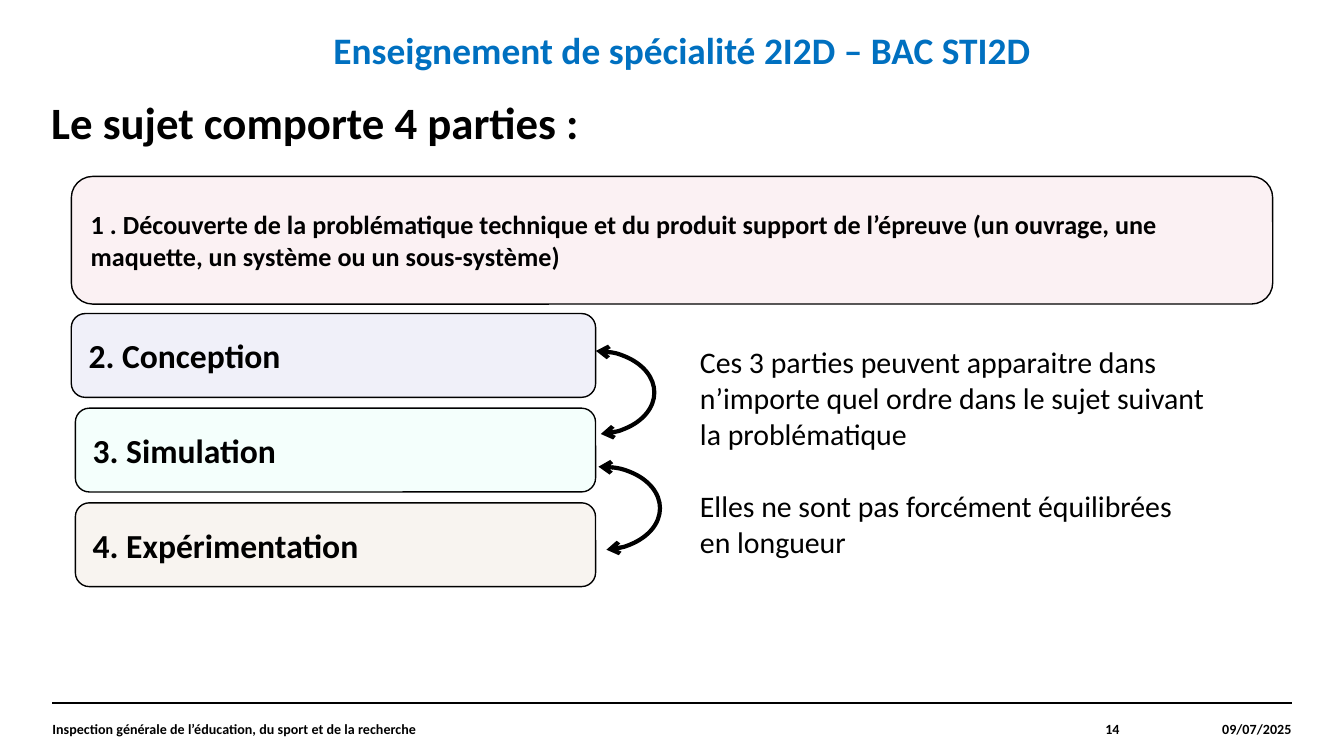
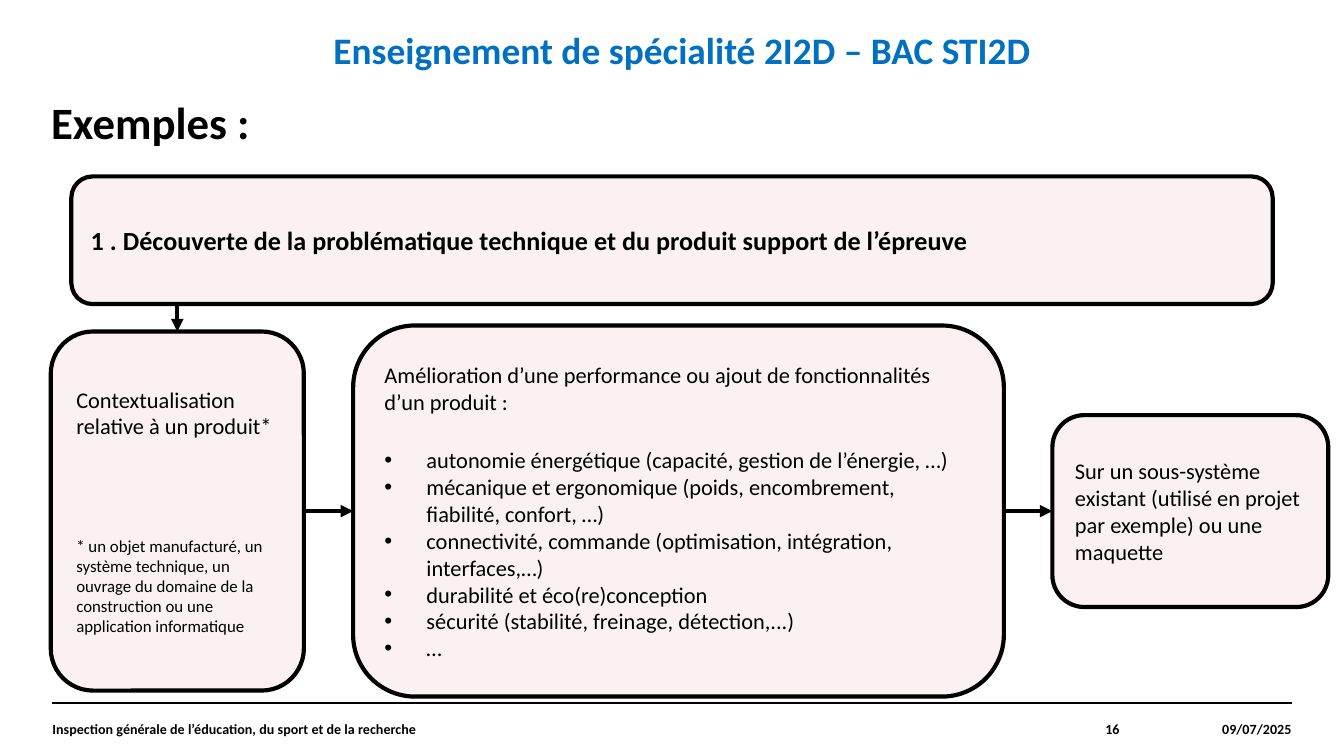
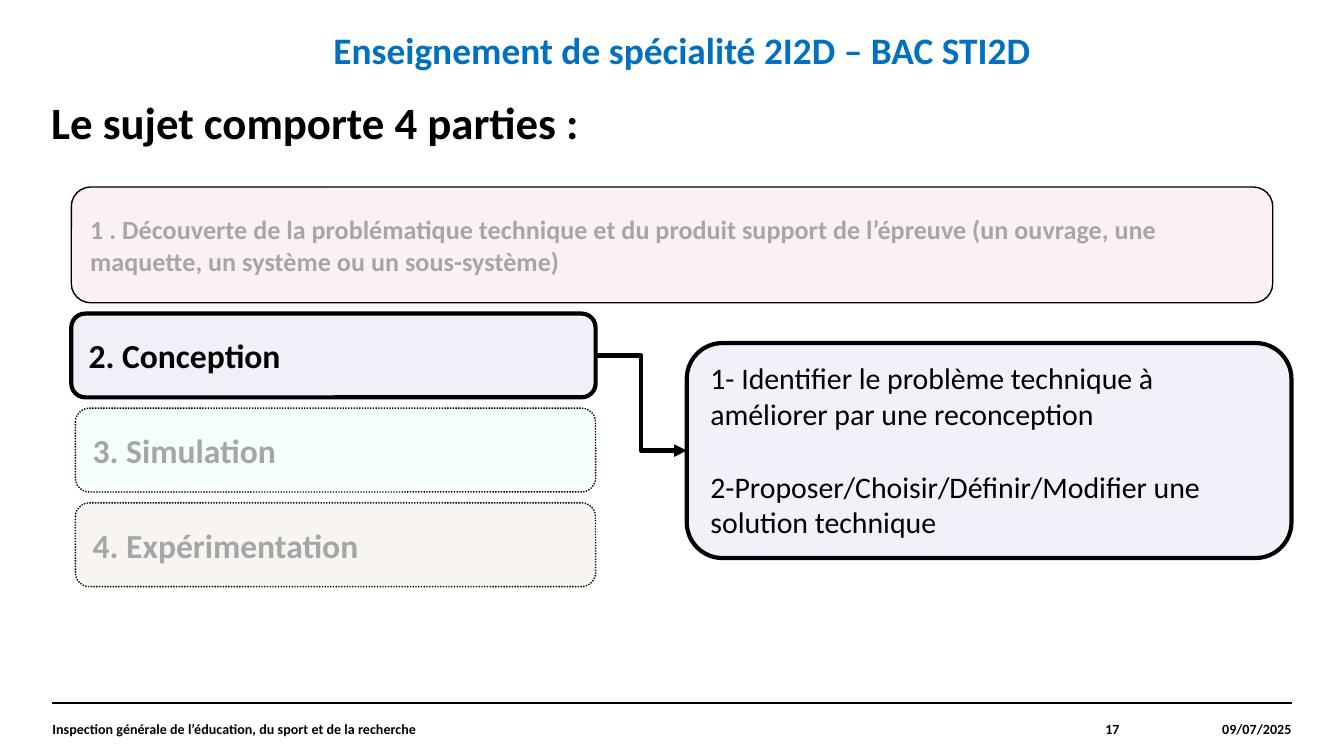
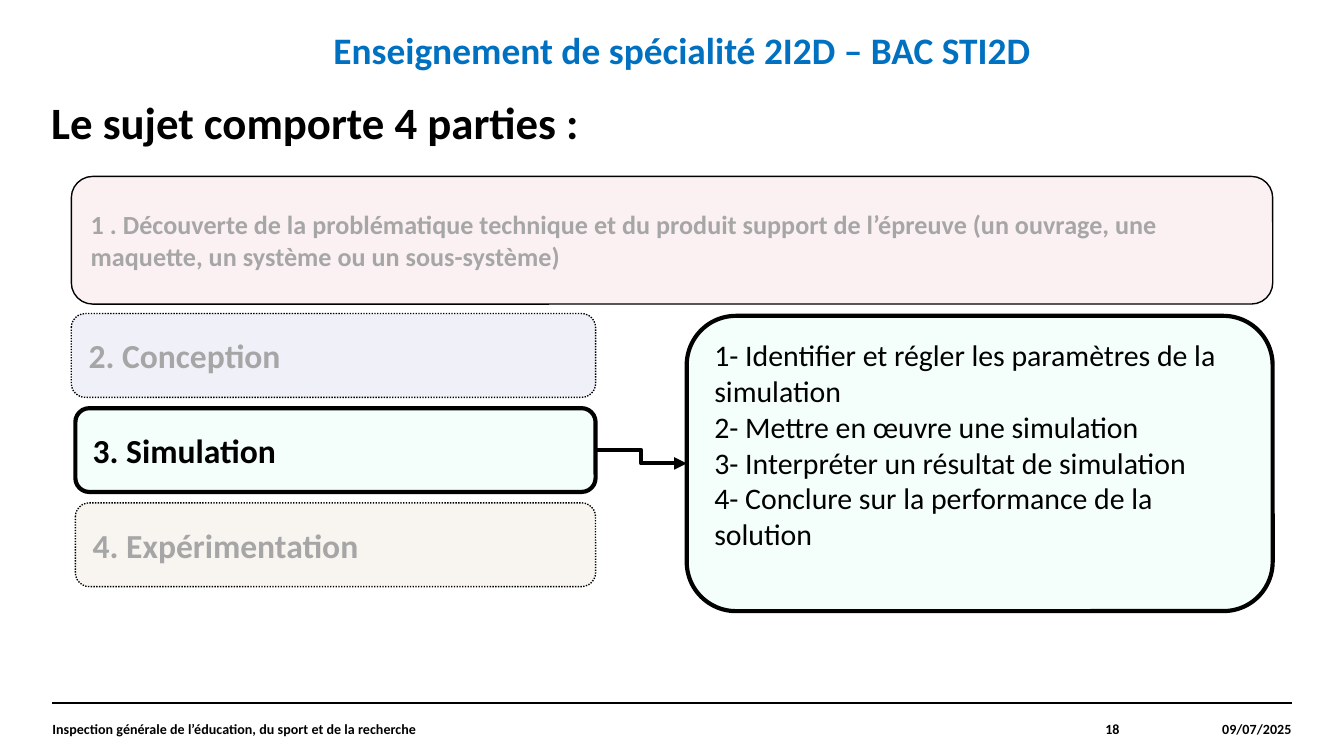
from dataclasses import dataclass

from lxml.etree import SubElement
from pptx import Presentation
from pptx.dml.color import RGBColor
from pptx.enum.dml import MSO_LINE
from pptx.enum.shapes import MSO_CONNECTOR, MSO_SHAPE
from pptx.enum.text import MSO_ANCHOR, MSO_AUTO_SIZE, PP_ALIGN
from pptx.oxml.ns import qn
from pptx.util import Pt


@dataclass(frozen=True)
class Theme:
    font: str = "Calibri"
    # Colours
    black: str = "000000"
    muted: str = "A6A6A6"
    heading: str = "0070C0"
    discovery: str = "F2C9D1"
    design: str = "C6C6EA"
    simulation: str = "D5FFF4"
    experiment: str = "E7D4C6"
    design_detail: str = "F1F1FA"
    simulation_detail: str = "F4FFFC"
    tint: int = 25  # opacity of the part colours, in percent
    # Type sizes
    title_size: float = 24
    heading_size: float = 20
    part_size: float = 18
    detail_size: float = 16
    discovery_size: float = 14
    example_size: float = 12
    note_size: float = 9
    footer_size: float = 7.5
    # Line widths
    thin: float = 0.75
    thick: float = 2.25


THEME = Theme()

HEADING = "Enseignement de spécialité 2I2D – BAC STI2D"
INSPECTORATE = "Inspection générale de l’éducation, du sport et de la recherche"
DATE = "09/07/2025"
FOUR_PARTS = "Le sujet comporte 4 parties :"
DISCOVERY = "1 . Découverte de la problématique technique et du produit support de l’épreuve"
DISCOVERY_SCOPE = " (un ouvrage, une maquette, un système ou un sous-système)"
DISCOVERY_AT = (38.2, 94.5, 643.6, 68.4)

# Label, tint and left edge of parts 2 to 4
PARTS = [
    ("2. Conception", THEME.design, 38.2),
    ("3. Simulation", THEME.simulation, 40.4),
    ("4. Expérimentation", THEME.experiment, 40.4),
]
PARTS_TOP, PARTS_PITCH, PARTS_RIGHT, PART_HEIGHT = 168, 50.7, 319.1, 44.9

# Connection sites of a rounded rectangle
TOP, LEFT, RIGHT = 0, 1, 3


@dataclass(frozen=True)
class Para:
    text: str
    size: float
    gap: float = 0
    bullet: bool = False
    bold: bool = False
    color: str = THEME.black
    align: PP_ALIGN = PP_ALIGN.LEFT


def points(*values):
    return [Pt(value) for value in values]


def add_bullet(paragraph):
    properties = paragraph._p.get_or_add_pPr()
    properties.set("marL", str(Pt(22.5)))
    properties.set("indent", str(-Pt(22.5)))
    SubElement(properties, qn("a:buFont")).set("typeface", "Arial")
    SubElement(properties, qn("a:buChar")).set("char", "•")


def write(frame, paras, anchor=MSO_ANCHOR.TOP, margins=(7.2, 3.6)):
    frame.word_wrap = True
    frame.auto_size = MSO_AUTO_SIZE.NONE
    frame.vertical_anchor = anchor
    frame.margin_left = frame.margin_right = Pt(margins[0])
    frame.margin_top = frame.margin_bottom = Pt(margins[1])
    for index, para in enumerate(paras):
        paragraph = frame.add_paragraph() if index else frame.paragraphs[0]
        paragraph.text = para.text
        paragraph.alignment = para.align
        if para.gap:
            paragraph.space_before = Pt(para.gap)
        if para.bullet:
            add_bullet(paragraph)
        font = paragraph.font
        font.name, font.size, font.bold = THEME.font, Pt(para.size), para.bold
        font.color.rgb = RGBColor.from_string(para.color)


def add_text(slide, at, paras, **layout):
    write(slide.shapes.add_textbox(*points(*at)).text_frame, paras, **layout)


def style_line(line, width):
    line.color.rgb = RGBColor.from_string(THEME.black)
    line.width = Pt(width)


def add_box(slide, at, fill, paras, width=THEME.thick, opacity=THEME.tint,
            dotted=False, anchor=MSO_ANCHOR.MIDDLE):
    box = slide.shapes.add_shape(MSO_SHAPE.ROUNDED_RECTANGLE, *points(*at))
    box.shadow.inherit = False
    box.fill.solid()
    box.fill.fore_color.rgb = RGBColor.from_string(fill)
    if opacity < 100:
        color = box._element.spPr.find(".//" + qn("a:srgbClr"))
        SubElement(color, qn("a:alpha")).set("val", str(opacity * 1000))
    style_line(box.line, width)
    if dotted:
        box.line.dash_style = MSO_LINE.ROUND_DOT
    write(box.text_frame, paras, anchor)
    return box


def add_line(slide, ends, width=THEME.thick, kind=MSO_CONNECTOR.STRAIGHT):
    line = slide.shapes.add_connector(kind, *points(*ends))
    style_line(line.line, width)
    SubElement(line._element.spPr, qn("a:effectLst"))
    return line


def add_arrowheads(shape, **heads):
    outline = shape.line._get_or_add_ln()
    for end, kind in heads.items():
        SubElement(outline, qn(f"a:{end}")).set("type", kind)


def join(slide, source, target, kind=MSO_CONNECTOR.STRAIGHT):
    arrow = add_line(slide, (0, 0, 0, 0), kind=kind)
    arrow.begin_connect(source, RIGHT)
    arrow.end_connect(target, LEFT)
    add_arrowheads(arrow, tailEnd="triangle")


def add_swap_arc(slide, left, top, start):
    arc = slide.shapes.add_shape(MSO_SHAPE.ARC, *points(left, top, 62.6, 44.6))
    arc.adjustments[0], arc.adjustments[1] = start, 49.97
    arc.shadow.inherit = False
    arc.fill.background()
    style_line(arc.line, THEME.thick)
    add_arrowheads(arc, headEnd="arrow", tailEnd="arrow")


def add_slide(deck, title, number):
    """Slide with its title, running heading and footer."""
    slide = deck.slides.add_slide(deck.slide_layouts[5])
    placeholder = slide.shapes.title
    (placeholder.left, placeholder.top,
     placeholder.width, placeholder.height) = points(27.4, 54, 663, 28)
    write(placeholder.text_frame, [Para(title, THEME.title_size, bold=True)], margins=(0, 0))
    placeholder.text_frame.paragraphs[0].line_spacing = 0.9

    add_text(slide, (178.6, 14.4, 448, 28),
             [Para(HEADING, THEME.heading_size, bold=True, color=THEME.heading)],
             margins=(0, 0))
    add_line(slide, (28.1, 376.6, 691.9, 376.6), width=0.8)
    for text, left, width, align in (
        (INSPECTORATE, 28.1, 465, PP_ALIGN.LEFT),
        (str(number), 493.2, 106.6, PP_ALIGN.RIGHT),
        (DATE, 599.8, 92.1, PP_ALIGN.RIGHT),
    ):
        add_text(slide, (left, 376.6, width, 28),
                 [Para(text, THEME.footer_size, bold=True, align=align)],
                 anchor=MSO_ANCHOR.MIDDLE, margins=(0, 0))
    return slide


def add_parts(slide, active=None, discovery_at=DISCOVERY_AT):
    """The four parts; with an active one, the others are muted."""
    focused = active is not None
    add_box(slide, discovery_at, THEME.discovery,
            [Para(DISCOVERY + DISCOVERY_SCOPE, THEME.discovery_size, bold=True,
                  color=THEME.muted if focused else THEME.black)], width=THEME.thin)
    boxes = []
    for index, (label, tint, left) in enumerate(PARTS):
        is_active = index == active
        is_muted = focused and not is_active
        at = (left, PARTS_TOP + index * PARTS_PITCH, PARTS_RIGHT - left, PART_HEIGHT)
        boxes.append(add_box(
            slide, at, tint,
            [Para(label, THEME.part_size, bold=True,
                  color=THEME.muted if is_muted else THEME.black)],
            width=THEME.thick if is_active else THEME.thin, dotted=is_muted))
    return boxes


def add_part_detail(slide, part, at, fill, paras):
    detail = add_box(slide, at, fill, paras, opacity=100, anchor=MSO_ANCHOR.TOP)
    join(slide, part, detail, MSO_CONNECTOR.ELBOW)


def build_overview(deck):
    slide = add_slide(deck, FOUR_PARTS, 14)
    add_parts(slide)
    add_swap_arc(slide, 288, 188, 162)
    add_swap_arc(slide, 291, 250, 159.44)
    add_text(slide, (367.9, 180.8, 284.4, 124), [
        Para("Ces 3 parties peuvent apparaitre dans n’importe quel ordre dans le sujet "
             "suivant la problématique", THEME.detail_size),
        Para("Elles ne sont pas forcément équilibrées en longueur", THEME.detail_size, gap=19.5),
    ])


def build_examples(deck):
    slide = add_slide(deck, "Exemples :", 16)
    add_box(slide, DISCOVERY_AT, THEME.discovery,
            [Para(DISCOVERY, THEME.discovery_size, bold=True)])

    # Improvements, with the gap before the first bullet
    improvements = [
        "autonomie énergétique (capacité, gestion de l’énergie, …)",
        "mécanique et ergonomique (poids, encombrement, fiabilité, confort, …)",
        "connectivité, commande (optimisation, intégration, interfaces,…)",
        "durabilité et éco(re)conception",
        "sécurité (stabilité, freinage, détection,...)",
        "…",
    ]
    improvement = add_box(slide, (189.2, 174.4, 348.6, 198.8), THEME.discovery, [
        Para("Amélioration d’une performance ou ajout de fonctionnalités d’un produit :",
             THEME.example_size),
        *(Para(text, THEME.example_size, gap=0 if index else 17, bullet=True)
          for index, text in enumerate(improvements)),
    ])
    subsystem = add_box(slide, (563.8, 222.4, 147.8, 102.8), THEME.discovery, [
        Para("Sur un sous-système existant (utilisé en projet par exemple) ou une maquette",
             THEME.example_size),
    ])
    context = add_box(slide, (27.2, 177.6, 135.6, 192.4), THEME.discovery, [
        Para("Contextualisation relative à un produit*", THEME.example_size),
        Para("* un objet manufacturé, un système technique, un ouvrage du domaine de la "
             "construction ou une application informatique", THEME.note_size, gap=51.3),
    ])

    # Reading order
    join(slide, improvement, subsystem)
    join(slide, context, improvement)
    down = add_line(slide, (95, 162.9, 95, 177.6))
    down.end_connect(context, TOP)
    add_arrowheads(down, tailEnd="triangle")


def build_design(deck):
    slide = add_slide(deck, FOUR_PARTS, 17)
    parts = add_parts(slide, active=0, discovery_at=(38.2, 100.2, 643.6, 62))
    add_part_detail(slide, parts[0], (367.9, 183.8, 324, 115.2), THEME.design_detail, [
        Para("1- Identifier le problème technique à améliorer par une reconception",
             THEME.detail_size),
        Para("2-Proposer/Choisir/Définir/Modifier une solution technique",
             THEME.detail_size, gap=19.5),
    ])


def build_simulation(deck):
    slide = add_slide(deck, FOUR_PARTS, 18)
    parts = add_parts(slide, active=1)
    add_part_detail(slide, parts[1], (367.9, 169.2, 313.9, 158.2), THEME.simulation_detail, [
        Para(step, THEME.detail_size) for step in (
            "1- Identifier et régler les paramètres de la simulation",
            "2- Mettre en œuvre une simulation",
            "3- Interpréter un résultat de simulation",
            "4- Conclure sur la performance de la solution",
        )
    ])


def main():
    deck = Presentation()
    deck.slide_width, deck.slide_height = points(720, 405)
    build_overview(deck)
    build_examples(deck)
    build_design(deck)
    build_simulation(deck)
    deck.save("out.pptx")


if __name__ == "__main__":
    main()
